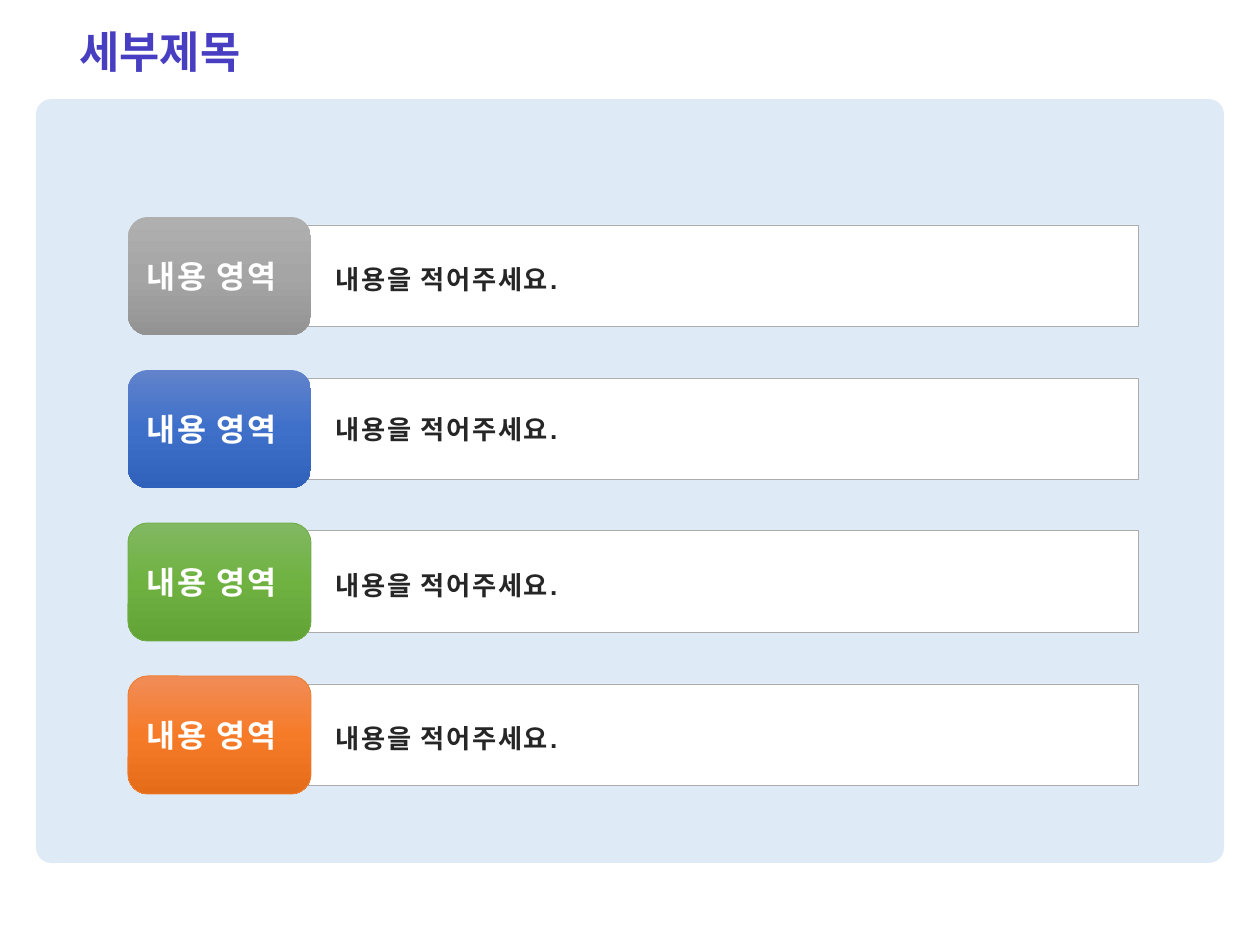
from lxml.etree import SubElement
from pptx import Presentation
from pptx.dml.color import RGBColor
from pptx.enum.shapes import MSO_SHAPE
from pptx.enum.text import MSO_ANCHOR, MSO_AUTO_SIZE, PP_ALIGN
from pptx.oxml.ns import qn
from pptx.util import Pt

TITLE = "세부제목"
# label, gradient colours, badge outline, content, content offset in its row
ROWS = [
    ("내용 영역", ("AFAFAF", "A5A5A5", "939393"), None, "내용을 적어주세요.", 32),
    ("내용 영역", ("6183CB", "3E70CA", "3062BB"), None, "내용을 적어주세요.", 29),
    ("내용 영역", ("81B861", "6FB242", "62A336"), "70AD47", "내용을 적어주세요.", 32),
    ("내용 영역", ("F18C57", "F67B28", "E56C19"), "ED7D31", "내용을 적어주세요.", 32),
]
ROW_TOP, ROW_PITCH = 225, 153


def px(length):
    return round(length * 914400 / 126)


def rgb(colour):
    return RGBColor.from_string(colour)


def add_box(shapes, kind, left, top, width, height, fill=None, line=None):
    box = shapes.add_shape(kind, px(left), px(top), px(width), px(height))
    box.shadow.inherit = False
    if fill:
        box.fill.solid()
        box.fill.fore_color.rgb = rgb(fill)
    if line:
        box.line.color.rgb = rgb(line)
        box.line.width = Pt(0.5)
    else:
        box.line.fill.background()
    return box


def fill_gradient(box, colours):
    """Fill from top to bottom with evenly spaced colours."""
    box.fill.gradient()
    box.fill.gradient_angle = 270
    stops = box._element.spPr.find(qn("a:gradFill")).find(qn("a:gsLst"))
    for stop in list(stops):
        stops.remove(stop)
    for i, colour in enumerate(colours):
        position = str(i * 100000 // (len(colours) - 1))
        stop = SubElement(stops, qn("a:gs"), pos=position)
        SubElement(stop, qn("a:srgbClr"), val=colour)


def write(frame, text, size, colour, font="Arial", spacing=0):
    paragraph = frame.paragraphs[0]
    paragraph.alignment = PP_ALIGN.LEFT
    run = paragraph.add_run()
    run.text = text
    run.font.size = Pt(size)
    run.font.name = font
    run.font.bold = True
    run.font.color.rgb = rgb(colour)
    if spacing:
        run.font._element.set("spc", str(spacing * 100))
    return paragraph


def add_text(shapes, text, left, top, width, height, wrap=True, **style):
    frame = shapes.add_textbox(px(left), px(top), px(width), px(height)).text_frame
    frame.word_wrap = wrap
    frame.auto_size = MSO_AUTO_SIZE.SHAPE_TO_FIT_TEXT
    write(frame, text, **style)


def main():
    deck = Presentation()
    deck.slide_width, deck.slide_height = px(1260), px(945)
    slide = deck.slides.add_slide(deck.slide_layouts[5])
    shapes = slide.shapes

    panel = add_box(shapes, MSO_SHAPE.ROUNDED_RECTANGLE, 36, 99, 1188, 764, "DEEBF7")
    panel.adjustments[0] = 0.02

    title = shapes.title
    panel._element.addnext(title._element)
    title.left, title.top, title.width, title.height = px(67), 0, px(1086), px(108)
    title.text_frame.vertical_anchor = MSO_ANCHOR.MIDDLE
    heading = write(title.text_frame, TITLE, size=25, colour="473EC1", font="Calibri")
    heading.line_spacing = 0.9

    for i, (label, colours, outline, content, offset) in enumerate(ROWS):
        top = ROW_TOP + i * ROW_PITCH
        group = shapes.add_group_shape().shapes
        add_box(group, MSO_SHAPE.RECTANGLE, 242, top, 897, 102, "FFFFFF", "ACACAC")
        badge = add_box(group, MSO_SHAPE.ROUNDED_RECTANGLE, 128, top - 8, 183, 118,
                        line=outline)
        fill_gradient(badge, colours)
        add_text(shapes, label, 134, top + 26, 172, 50, wrap=False,
                 size=18, colour="FFFFFF", spacing=1)
        add_text(shapes, content, 323, top + offset, 815, 44,
                 size=15, colour="262626", spacing=1)

    deck.save("out.pptx")


if __name__ == "__main__":
    main()
